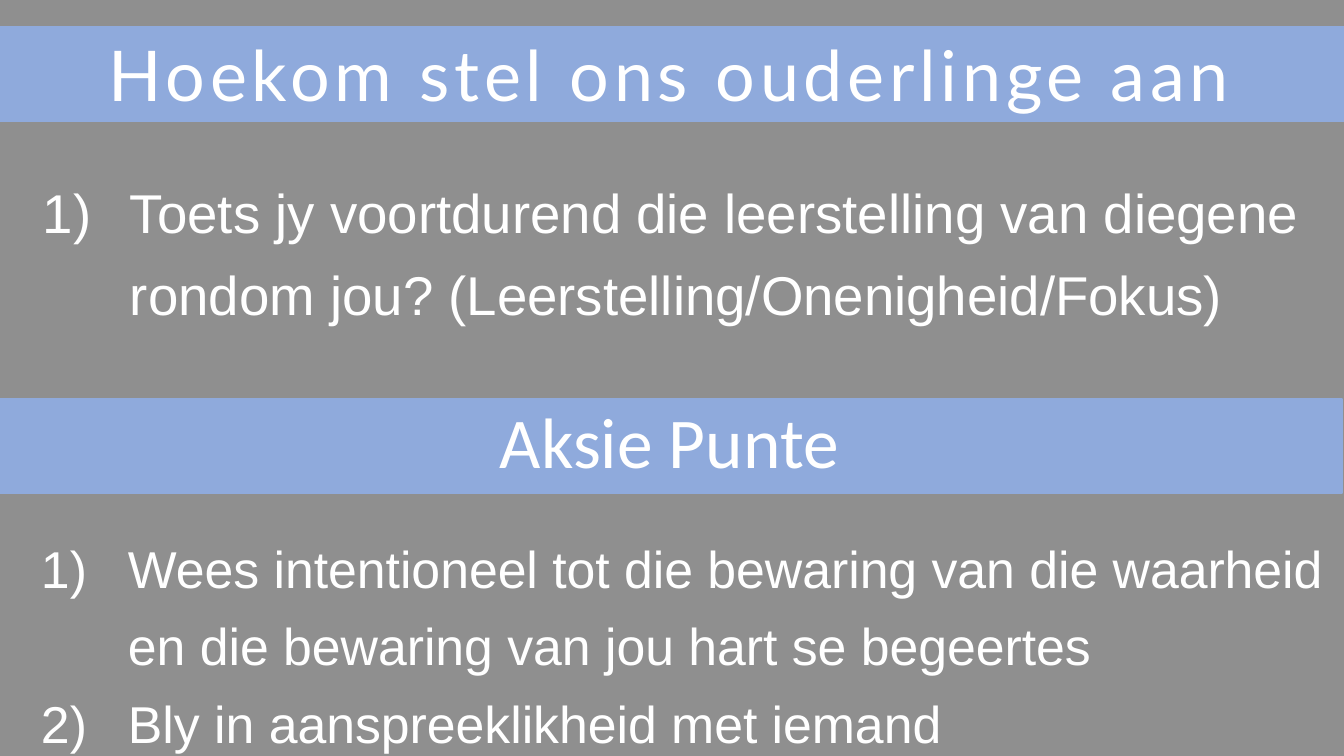
"""Build the slide on appointing elders, with its question and action points."""
from lxml import etree
from pptx import Presentation
from pptx.dml.color import RGBColor
from pptx.enum.shapes import MSO_SHAPE
from pptx.enum.text import MSO_ANCHOR, PP_ALIGN
from pptx.oxml.ns import qn
from pptx.util import Emu, Pt

RECTANGLE = MSO_SHAPE.RECTANGLE
TOP, MIDDLE = MSO_ANCHOR.TOP, MSO_ANCHOR.MIDDLE
CENTER = PP_ALIGN.CENTER
WHITE = RGBColor(0xFF, 0xFF, 0xFF)
NEAR_BLACK = RGBColor(0x0D, 0x0D, 0x0D)
BAND_BLUE = RGBColor(0x8F, 0xAA, 0xDC)

PX = 12700 * 72 / 100.8
SLIDE_SIZE = (1344, 756)
VEIL = (-14, -13, 1368, 826)
VEIL_OPACITY = 46
BANDS = [(0, 27, 1344, 94), (-2, 399, 1344, 94)]
INSET = 5
HANGING = 87

HEADINGS = [
    {"text": "Hoekom stel ons ouderlinge aan", "box": (5, -14, 1330, 175),
     "font": "Lato", "size": 50, "tracking": 3.4, "spacing": 1.0},
    {"text": "Aksie Punte", "box": (90, 358, 1159, 175),
     "font": "Calibri", "size": 51, "tracking": 0, "spacing": 0.9},
]
LISTS = [
    {"box": (38, 158, 1267, 143), "size": 39, "items": [
        "Toets jy voortdurend die leerstelling van diegene rondom jou? "
        "(Leerstelling/Onenigheid/Fokus)"]},
    {"box": (36, 516, 1299, 208), "size": 37, "items": [
        "Wees intentioneel tot die bewaring van die waarheid en die bewaring "
        "van jou hart se begeertes",
        "Bly in aanspreeklikheid met iemand"]},
]


def px(length):
    return Emu(round(length * PX))


def add_rectangle(slide, box, color):
    shape = slide.shapes.add_shape(RECTANGLE, *map(px, box))
    shape.shadow.inherit = False
    shape.fill.solid()
    shape.fill.fore_color.rgb = color
    return shape


def add_veil(slide):
    veil = add_rectangle(slide, VEIL, NEAR_BLACK)
    veil.line.fill.background()
    color = veil.fill._xPr.find(qn("a:solidFill"))[0]
    etree.SubElement(color, qn("a:alpha"), val=str(VEIL_OPACITY * 1000))


def add_band(slide, box):
    band = add_rectangle(slide, box, BAND_BLUE)
    band.line.color.rgb = BAND_BLUE
    band.line.width = Pt(2)


def add_text_frame(slide, box, anchor):
    frame = slide.shapes.add_textbox(*map(px, box)).text_frame
    frame.word_wrap = True
    frame.vertical_anchor = anchor
    frame.margin_left = frame.margin_right = px(INSET)
    frame.margin_top = frame.margin_bottom = px(INSET)
    return frame


def add_run(paragraph, text, font, size):
    run = paragraph.add_run()
    run.text = text
    run.font.name = font
    run.font.size = Pt(size)
    run.font.color.rgb = WHITE
    return run


def add_heading(slide, heading):
    paragraph = add_text_frame(slide, heading["box"], MIDDLE).paragraphs[0]
    paragraph.alignment = CENTER
    paragraph.line_spacing = heading["spacing"]
    run = add_run(paragraph, heading["text"], heading["font"], heading["size"])
    if heading["tracking"]:
        run.font._element.set("spc", str(round(heading["tracking"] * 100)))


def add_numbered_list(slide, numbered):
    frame = add_text_frame(slide, numbered["box"], TOP)
    for index, item in enumerate(numbered["items"]):
        paragraph = frame.add_paragraph() if index else frame.paragraphs[0]
        paragraph.line_spacing = 1.25
        properties = paragraph._p.get_or_add_pPr()
        properties.set("marL", str(px(HANGING)))
        properties.set("indent", str(-px(HANGING)))
        etree.SubElement(properties, qn("a:buFont"), typeface="+mj-lt")
        etree.SubElement(properties, qn("a:buAutoNum"), type="arabicParenR")
        add_run(paragraph, item, "Arial", numbered["size"])


def main():
    presentation = Presentation()
    presentation.slide_width, presentation.slide_height = map(px, SLIDE_SIZE)
    slide = presentation.slides.add_slide(presentation.slide_layouts[6])
    add_veil(slide)
    for box in BANDS:
        add_band(slide, box)
    for heading in HEADINGS:
        add_heading(slide, heading)
    for numbered in LISTS:
        add_numbered_list(slide, numbered)
    presentation.save("out.pptx")


if __name__ == "__main__":
    main()
